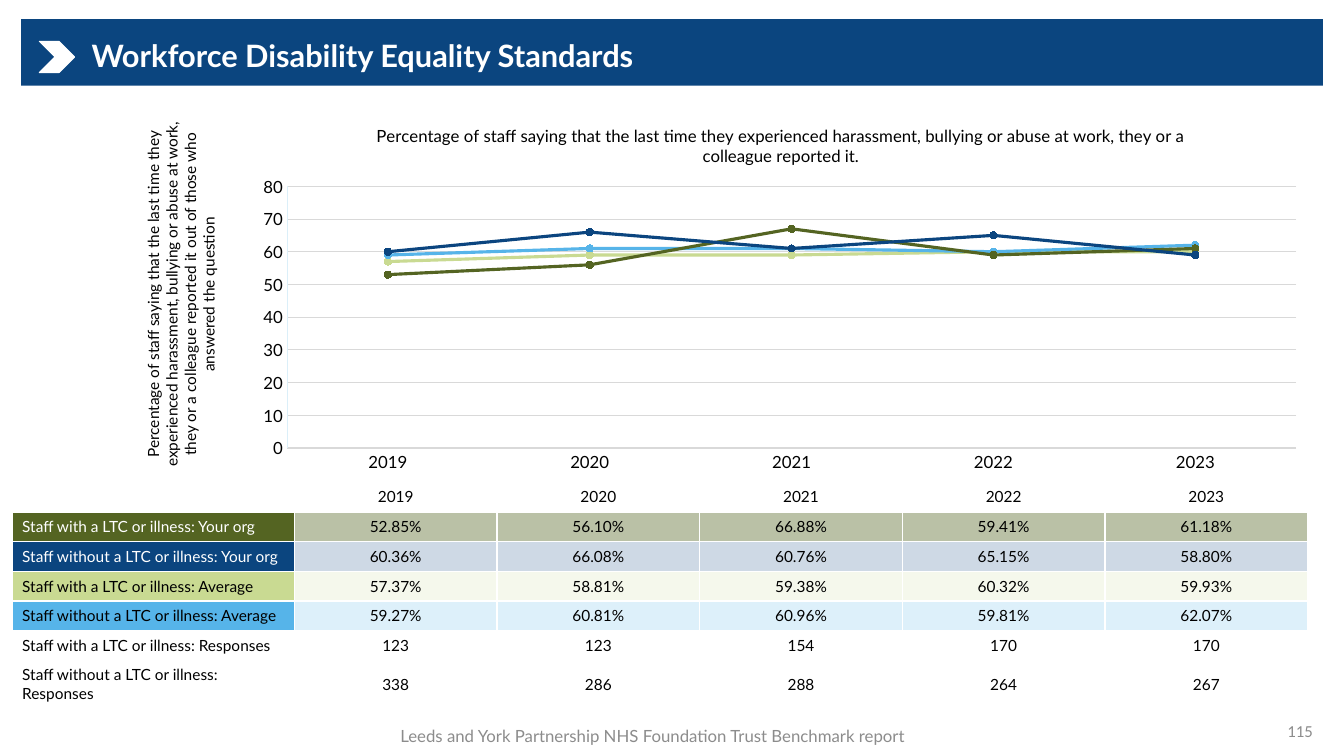
from lxml import etree
from pptx import Presentation
from pptx.chart.data import CategoryChartData
from pptx.dml.color import RGBColor
from pptx.enum.chart import XL_CHART_TYPE as ChartType, XL_MARKER_STYLE as Marker, XL_TICK_MARK as Tick
from pptx.enum.shapes import MSO_SHAPE as Shape
from pptx.enum.text import MSO_ANCHOR as Anchor, MSO_AUTO_SIZE as AutoSize, PP_ALIGN as Align
from pptx.oxml import parse_xml
from pptx.oxml.ns import nsdecls, qn
from pptx.util import Inches, Pt

COLORS = {
    "navy": "0B457F", "olive": "546422", "lime": "C9DA92", "sky": "56B4E9",
    "white": "FFFFFF", "black": "000000", "grey": "8C8C8C",
    "grid": "D9D9D9", "axis": "DBEFF9",
}
YEARS = ["2019", "2020", "2021", "2022", "2023"]
# label, fill, label colour, opacity of the value cells in percent, values
RATES = [
    ("Staff with a LTC or illness: Your org", "olive", "white", 40, [52.85, 56.10, 66.88, 59.41, 61.18]),
    ("Staff without a LTC or illness: Your org", "navy", "white", 20, [60.36, 66.08, 60.76, 65.15, 58.80]),
    ("Staff with a LTC or illness: Average", "lime", "black", 17, [57.37, 58.81, 59.38, 60.32, 59.93]),
    ("Staff without a LTC or illness: Average", "sky", "black", 20, [59.27, 60.81, 60.96, 59.81, 62.07]),
]
RESPONSES = [
    ("Staff with a LTC or illness: Responses", [123, 123, 154, 170, 170]),
    ("Staff without a LTC or illness: Responses", [338, 286, 288, 264, 267]),
]


def style_font(font, size, color, name="Lato", bold=False):
    font.size, font.name, font.bold = Pt(size), name, bold
    font.color.rgb = RGBColor.from_string(COLORS[color])


def add_text(page, text, place, size, color, align, anchor=Anchor.MIDDLE, name="Lato", bold=False):
    box = page.shapes.add_textbox(*[Inches(length) for length in place])
    frame = box.text_frame
    frame.text = text
    frame.word_wrap = True
    frame.vertical_anchor = anchor
    para = frame.paragraphs[0]
    para.alignment = align
    style_font(para.runs[0].font, size, color, name, bold)
    return box


deck = Presentation()
deck.slide_width, deck.slide_height = Inches(13.33), Inches(7.5)
page = deck.slides.add_slide(deck.slide_layouts[6])

# Header
for kind, place, color in [
    (Shape.RECTANGLE, (0.21, 0.19, 12.91, 0.66), "navy"),
    (Shape.CHEVRON, (0.39, 0.41, 0.35, 0.31), "white"),
]:
    shape = page.shapes.add_shape(kind, *[Inches(length) for length in place])
    shape.shadow.inherit = False
    shape.fill.solid()
    shape.fill.fore_color.rgb = RGBColor.from_string(COLORS[color])
    if kind == Shape.CHEVRON:
        shape.line.color.rgb = RGBColor.from_string(COLORS[color])
        shape.line.width = Pt(0.75)
    else:
        shape.line.fill.background()
title = add_text(page, "Workforce Disability Equality Standards", (0.81, 0.35, 9.61, 0.44),
                 22, "white", Align.LEFT, bold=True)
title.text_frame.paragraphs[0].line_spacing = 0.9

# Rotated caption of the value axis
caption = add_text(
    page,
    "Percentage of staff saying that the last time they experienced harassment, bullying or abuse "
    "at work, they or a colleague reported it out of those who answered the question",
    (-0.06, 2.5, 3.71, 0.84), 11, "black", Align.CENTER, Anchor.TOP)
caption.rotation = 270
caption.text_frame.auto_size = AutoSize.SHAPE_TO_FIT_TEXT

# Line chart in whole percent: averages behind, own organisation in front
data = CategoryChartData(number_format="0")
data.categories = YEARS
drawn_rates = RATES[2:] + RATES[:2]
for label, _, _, _, values in drawn_rates:
    data.add_series(label, [round(value) for value in values])
chart = page.shapes.add_chart(ChartType.LINE_MARKERS, Inches(2.42), Inches(1.07),
                              Inches(10.65), Inches(3.71), data).chart
style_font(chart.font, 10, "black")
chart.has_legend = False
chart.has_title = True
chart.chart_title.include_in_layout = False
heading = chart.chart_title.text_frame
heading.text = ("Percentage of staff saying that the last time they experienced harassment, "
                "bullying or abuse at work, they or a colleague reported it.")
style_font(heading.paragraphs[0].runs[0].font, 12, "black")

for axis, color, width in [(chart.category_axis, "grid", 0.75), (chart.value_axis, "axis", 0.25)]:
    axis.major_tick_mark = axis.minor_tick_mark = Tick.NONE
    style_font(axis.tick_labels.font, 12, "black")
    axis.format.line.color.rgb = RGBColor.from_string(COLORS[color])
    axis.format.line.width = Pt(width)
value_axis = chart.value_axis
value_axis.minimum_scale, value_axis.maximum_scale, value_axis.major_unit = 0, 80, 10
gridline = value_axis.major_gridlines.format.line
gridline.color.rgb = RGBColor.from_string(COLORS["grid"])
gridline.width = Pt(0.75)

plot = chart.plots[0]
plot.vary_by_categories = False
for series, (_, color, _, _, _) in zip(plot.series, drawn_rates):
    series.smooth = False
    series.format.line.color.rgb = RGBColor.from_string(COLORS[color])
    series.format.line.width = Pt(2.25)
    series.marker.style, series.marker.size = Marker.CIRCLE, 5
    series.marker.format.fill.solid()
    series.marker.format.fill.fore_color.rgb = RGBColor.from_string(COLORS[color])
    series.marker.format.line.color.rgb = RGBColor.from_string(COLORS[color])

plot_area = chart.value_axis._element.getparent()
for old_layout in plot_area.findall(qn("c:layout")):
    plot_area.remove(old_layout)
plot_area.insert(0, parse_xml(
    f'<c:layout {nsdecls("c")}><c:manualLayout><c:layoutTarget val="inner"/>'
    '<c:xMode val="edge"/><c:yMode val="edge"/>'
    '<c:x val="0.04"/><c:y val="0.21"/><c:w val="0.94"/><c:h val="0.7"/>'
    '</c:manualLayout></c:layout>'))

add_text(page, "115", (10.12, 7.05, 3, 0.4), 12, "grey", Align.RIGHT, name="Calibri")

# Table: each row is texts, fill, label colour, opacity
rows = [([""] + YEARS, None, "black", None)]
rows += [([label] + [f"{value:.2f}%" for value in values], fill, color, opacity)
         for label, fill, color, opacity, values in RATES]
rows += [([label] + [str(value) for value in values], None, "black", None)
         for label, values in RESPONSES]
table = page.shapes.add_table(len(rows), 6, Inches(0.12), Inches(4.78),
                              Inches(12.85), Inches(2.07)).table
table.first_row = table.horz_banding = False
for index, column in enumerate(table.columns):
    column.width = Inches(2.01 if index else 2.8)

for row_index, (texts, fill, label_color, opacity) in enumerate(rows):
    for column_index, text in enumerate(texts):
        cell = table.cell(row_index, column_index)
        cell.text = text
        cell.vertical_anchor = Anchor.MIDDLE
        para = cell.text_frame.paragraphs[0]
        para.alignment = Align.CENTER if column_index else Align.LEFT
        style_font(para.font, 11, "black")
        for span in para.runs:
            style_font(span.font, 11, "black" if column_index else label_color)

        properties = cell._tc.get_or_add_tcPr()
        if fill:
            cell.fill.solid()
            cell.fill.fore_color.rgb = RGBColor.from_string(COLORS[fill])
            if column_index:
                tint = properties.find(".//" + qn("a:srgbClr"))
                etree.SubElement(tint, qn("a:alpha")).set("val", str(opacity * 1000))
        else:
            cell.fill.background()
        for position, side in enumerate(["L", "R", "T", "B"]):
            thick = (row_index == 0 and side == "B") or (row_index == 1 and side == "T")
            properties.insert(position, parse_xml(
                f'<a:ln{side} {nsdecls("a")} w="{Pt(3 if thick else 1)}"><a:solidFill>'
                f'<a:srgbClr val="{COLORS["white"]}"/></a:solidFill></a:ln{side}>'))

add_text(page, "Leeds and York Partnership NHS Foundation Trust Benchmark report",
         (2.95, 7.1, 7.05, 0.39), 12, "grey", Align.CENTER)

deck.save("out.pptx")
